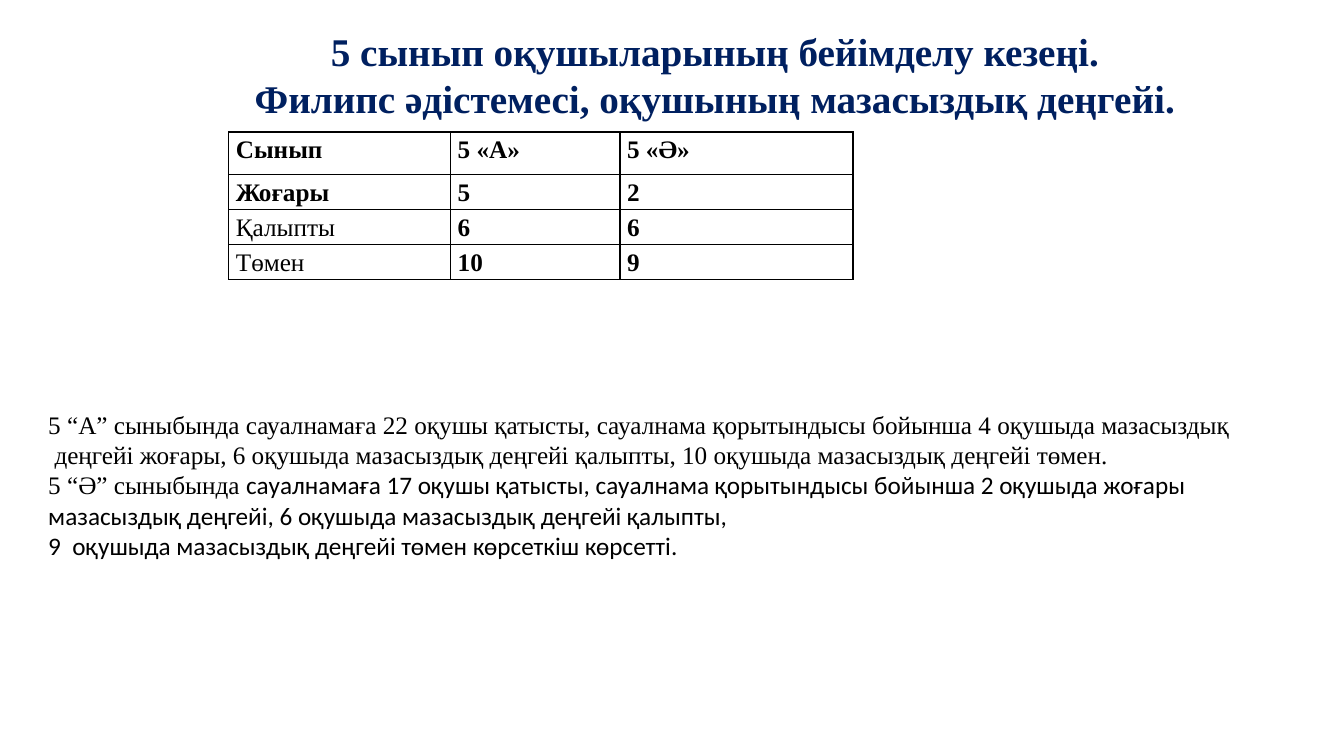
import pptx
import pptx.util
import pptx.dml.color
import pptx.enum.text
import pptx.oxml
from pptx.util import Inches

# Content
TITLE = [
    "5 сынып оқушыларының бейімделу кезеңі.",
    "Филипс әдістемесі, оқушының мазасыздық деңгейі.",
]
ANXIETY_LEVELS = [
    ("Сынып", "5 «А»", "5 «Ә»"),
    ("Жоғары", "5", "2"),
    ("Қалыпты", "6", "6"),
    ("Төмен", "10", "9"),
]
PLAIN_LABELS = {"Қалыпты", "Төмен"}
SERIF, SANS = "Times New Roman", "Calibri"
SUMMARY = [
    [("5 “А” сыныбында сауалнамаға 22 оқушы қатысты, сауалнама қорытындысы бойынша 4 оқушыда мазасыздық", SERIF)],
    [(" деңгейі жоғары, 6 оқушыда мазасыздық деңгейі қалыпты, 10 оқушыда мазасыздық деңгейі төмен.", SERIF)],
    [("5 “Ә” сыныбында ", SERIF),
     ("сауалнамаға 17 оқушы қатысты, сауалнама қорытындысы бойынша 2 оқушыда жоғары", SANS)],
    [("мазасыздық деңгейі, 6 оқушыда мазасыздық деңгейі қалыпты,", SANS)],
    [("9  оқушыда мазасыздық деңгейі төмен көрсеткіш көрсетті.", SANS)],
]
COLORS = {"title": "002060", "text": "000000", "border": "000000"}
COLUMN_WIDTHS = [2.2, 1.68, 2.31]
ROW_HEIGHTS = [0.42, 0.35, 0.35, 0.34]


def add_text(paragraph, text, font=SERIF, size=18, color="text", bold=False):
    run = paragraph.add_run()
    run.text = text
    run.font.name = font
    run.font.size = pptx.util.Pt(size)
    run.font.bold = bold
    run.font.color.rgb = pptx.dml.color.RGBColor.from_string(COLORS[color])


def next_paragraph(frame, index):
    return frame.add_paragraph() if index else frame.paragraphs[0]


def set_borders(cell):
    properties = cell._tc.get_or_add_tcPr()
    for position, side in enumerate(("lnL", "lnR", "lnT", "lnB")):
        properties.insert(position, pptx.oxml.parse_xml(
            f'<a:{side} xmlns:a="http://schemas.openxmlformats.org/drawingml/2006/main" w="12700">'
            f'<a:solidFill><a:srgbClr val="{COLORS["border"]}"/></a:solidFill></a:{side}>'))


presentation = pptx.Presentation()
presentation.slide_width, presentation.slide_height = Inches(13.33), Inches(7.5)
slide = presentation.slides.add_slide(presentation.slide_layouts[5])

# Title
title = slide.shapes.title
title.left, title.top = Inches(2.26), Inches(0.2)
title.width, title.height = Inches(9.66), Inches(1.08)
title.text_frame.auto_size = pptx.enum.text.MSO_AUTO_SIZE.NONE
title.text_frame.vertical_anchor = pptx.enum.text.MSO_ANCHOR.MIDDLE
for index, line in enumerate(TITLE):
    paragraph = next_paragraph(title.text_frame, index)
    paragraph.alignment = pptx.enum.text.PP_ALIGN.CENTER
    add_text(paragraph, line, size=28, color="title", bold=True)

# Table of anxiety levels
table = slide.shapes.add_table(
    len(ROW_HEIGHTS), len(COLUMN_WIDTHS), Inches(2.27), Inches(1.31),
    Inches(sum(COLUMN_WIDTHS)), Inches(sum(ROW_HEIGHTS))).table
for column, width in zip(table.columns, COLUMN_WIDTHS):
    column.width = Inches(width)
for row, height, values in zip(table.rows, ROW_HEIGHTS, ANXIETY_LEVELS):
    row.height = Inches(height)
    for cell, value in zip(row.cells, values):
        cell.margin_left = cell.margin_right = Inches(0.07)
        cell.margin_top = cell.margin_bottom = 0
        cell.fill.background()
        set_borders(cell)
        paragraph = cell.text_frame.paragraphs[0]
        paragraph.line_spacing = 1.15
        add_text(paragraph, value, bold=value not in PLAIN_LABELS)

# Summary
summary = slide.shapes.add_textbox(Inches(0.38), Inches(4.01), Inches(12.11), Inches(1.92))
summary.text_frame.word_wrap = False
for index, runs in enumerate(SUMMARY):
    paragraph = next_paragraph(summary.text_frame, index)
    for text, font in runs:
        add_text(paragraph, text, font=font)

presentation.save("out.pptx")
